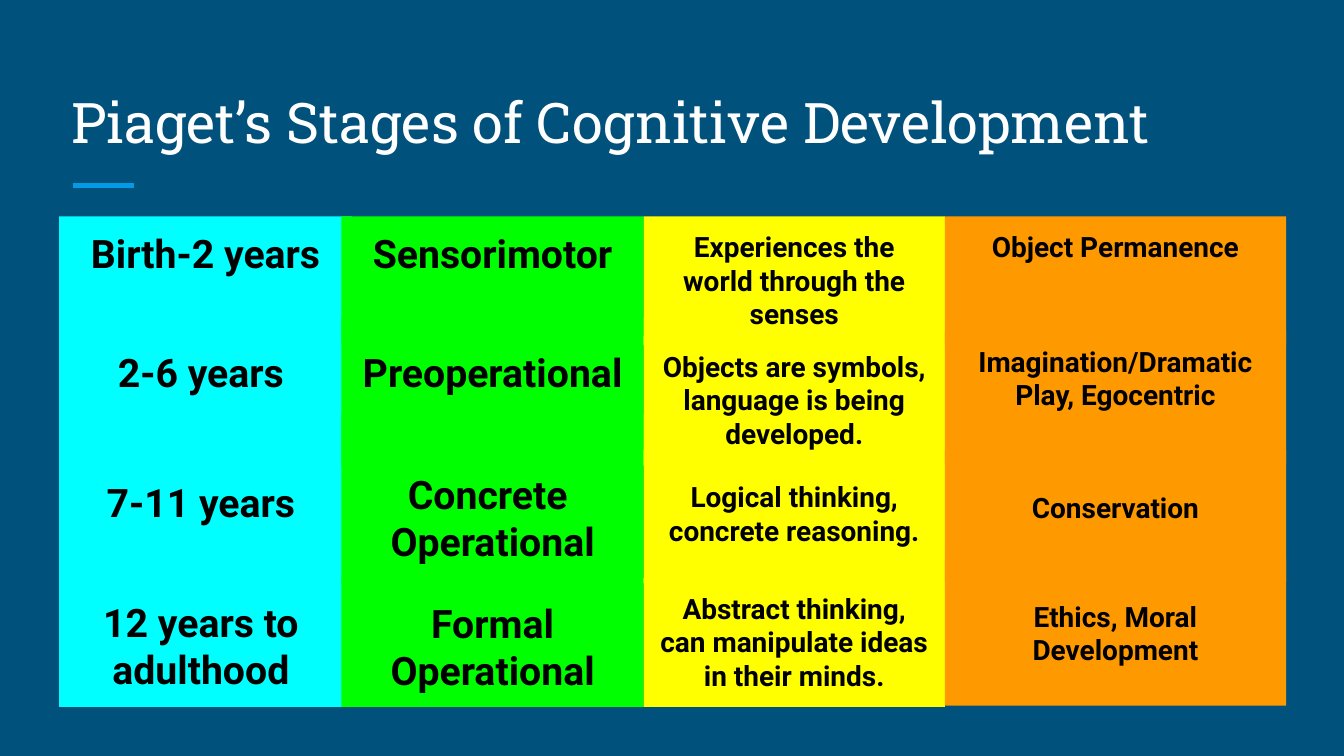
from dataclasses import dataclass

from lxml.etree import SubElement
from pptx import Presentation
from pptx.dml.color import RGBColor
from pptx.enum.shapes import MSO_CONNECTOR, MSO_SHAPE
from pptx.enum.text import MSO_ANCHOR, MSO_AUTO_SIZE, PP_ALIGN
from pptx.oxml.ns import qn
from pptx.util import Inches, Pt


@dataclass(frozen=True)
class Theme:
    background = RGBColor.from_string("00517C")
    accent = RGBColor.from_string("039BE5")
    title_color = RGBColor.from_string("FFFFFF")
    text_color = RGBColor.from_string("000000")
    cyan = RGBColor.from_string("00FFFF")
    green = RGBColor.from_string("00FF00")
    yellow = RGBColor.from_string("FFFF00")
    orange = RGBColor.from_string("FF9900")
    title_font = "Roboto Slab"
    body_font = "Roboto"
    title_size = Pt(30)
    stage_size = Pt(21)
    detail_size = Pt(15)


theme = Theme()
PADDING = 0.1


def set_frame(frame, anchor, extra_top=0):
    frame.word_wrap = True
    frame.auto_size = MSO_AUTO_SIZE.NONE
    frame.vertical_anchor = anchor
    frame.margin_left = frame.margin_right = frame.margin_bottom = Inches(PADDING)
    frame.margin_top = Inches(PADDING + extra_top)


def set_font(paragraph, name, size, color, bold=False):
    paragraph.font.name = name
    paragraph.font.size = size
    paragraph.font.color.rgb = color
    paragraph.font.bold = bold


presentation = Presentation()
presentation.slide_width = Inches(10)
presentation.slide_height = Inches(10) * 9 // 16
slide = presentation.slides.add_slide(presentation.slide_layouts[5])
slide.background.fill.solid()
slide.background.fill.fore_color.rgb = theme.background

# Title and accent line
accent_line = slide.shapes.add_connector(
    MSO_CONNECTOR.STRAIGHT, Inches(0.54), Inches(1.38), Inches(1), Inches(1.38))
accent_line.line.color.rgb = theme.accent
accent_line.line.width = Pt(3)
SubElement(accent_line.element.spPr, qn("a:effectLst"))

title = slide.shapes.title
title.left, title.top = Inches(0.43), Inches(0.5)
title.width, title.height = Inches(9.15), Inches(0.75)
set_frame(title.text_frame, MSO_ANCHOR.BOTTOM)
title.text_frame.text = "Piaget’s Stages of Cognitive Development"
title_paragraph = title.text_frame.paragraphs[0]
title_paragraph.alignment = PP_ALIGN.LEFT
set_font(title_paragraph, theme.title_font, theme.title_size, theme.title_color)

# Columns: left, width, fill, text size, boxes (text, top, height, extra space above text)
columns = [
    (0.44, 2.11, theme.cyan, theme.stage_size, [
        ("Birth-2 years", 1.61, 0.96, 0),
        ("2-6 years", 2.36, 1.11, 0.13),
        ("7-11 years", 3.11, 1.25, 0.35),
        ("12 years to adulthood", 4.35, 0.91, 0),
    ]),
    (2.54, 2.25, theme.green, theme.stage_size, [
        ("Sensorimotor", 1.61, 0.96, 0),
        ("Preoperational", 2.36, 1.11, 0.13),
        ("Concrete \nOperational", 3.08, 1.27, 0.32),
        ("Formal Operational", 4.3, 0.96, 0.06),
    ]),
    (4.79, 2.24, theme.yellow, theme.detail_size, [
        ("Experiences the world through the senses", 1.61, 0.96, 0),
        ("Objects are symbols, language is being developed.", 2.5, 0.96, 0),
        ("Logical thinking, concrete reasoning.", 3.35, 0.99, 0.12),
        ("Abstract thinking, can manipulate ideas in their minds.", 4.3, 0.96, 0),
    ]),
    (7.03, 2.54, theme.orange, theme.detail_size, [
        ("Object Permanence", 1.61, 0.96, 0),
        ("Imagination/Dramatic Play, Egocentric", 2.46, 0.99, 0),
        ("Conservation", 3.35, 0.98, 0.2),
        ("Ethics, Moral Development", 4.16, 1.09, 0.2),
    ]),
]

stage_boxes = []
for left, width, fill, size, boxes in columns:
    for text, top, height, extra_top in boxes:
        box = slide.shapes.add_shape(
            MSO_SHAPE.RECTANGLE, Inches(left), Inches(top), Inches(width), Inches(height))
        box.shadow.inherit = False
        box.fill.solid()
        box.fill.fore_color.rgb = fill
        box.line.fill.background()
        set_frame(box.text_frame, MSO_ANCHOR.TOP, extra_top)
        box.text_frame.text = text
        for paragraph in box.text_frame.paragraphs:
            paragraph.alignment = PP_ALIGN.CENTER
            set_font(paragraph, theme.body_font, size, theme.text_color, bold=True)
        stage_boxes.append(box)

# The first age box reaches slightly under the stage column
stage_boxes[0].width = Inches(2.18)

presentation.save("out.pptx")
